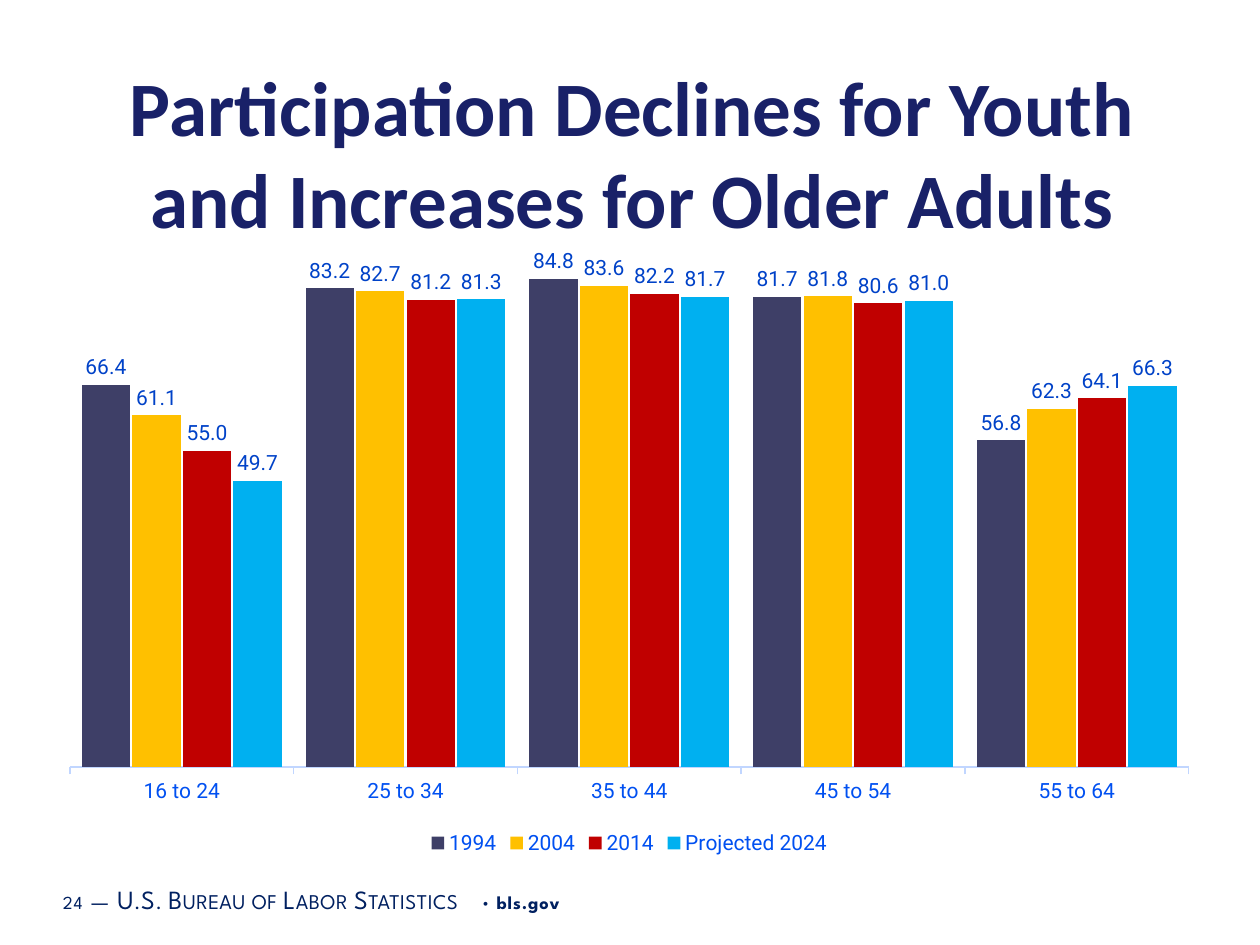
from lxml import etree
from pptx import Presentation
from pptx.chart.data import CategoryChartData
from pptx.dml.color import RGBColor
from pptx.enum.chart import XL_CHART_TYPE as ChartType
from pptx.enum.chart import XL_LABEL_POSITION as LabelPosition
from pptx.enum.chart import XL_LEGEND_POSITION as LegendPosition
from pptx.enum.chart import XL_TICK_LABEL_POSITION as TickLabels
from pptx.enum.chart import XL_TICK_MARK as TickMark
from pptx.enum.text import MSO_ANCHOR, PP_ALIGN
from pptx.oxml import parse_xml
from pptx.util import Inches, Pt

COLORS = {
    "title": "192168", "footer": "002060", "axis text": "0050F1",
    "axis line": "C1D6FF", "label": "0042C8",
}
CHART_NS = "http://schemas.openxmlformats.org/drawingml/2006/chart"


def format_font(font, name, size, color, bold=False):
    for attribute, value in {"name": name, "size": Pt(size), "bold": bold}.items():
        setattr(font, attribute, value)
    font.color.rgb = RGBColor.from_string(COLORS[color])


presentation = Presentation()
presentation.slide_width, presentation.slide_height = Inches(10), Inches(7.5)
slide = presentation.slides.add_slide(presentation.slide_layouts[5])

# Title
title = slide.shapes.title
title.left, title.top = Inches(0.52), Inches(0.3)
title.width, title.height = Inches(9), Inches(1.81)
title.text_frame.text = "Participation Declines for Youth and Increases for Older Adults"
title.text_frame.vertical_anchor = MSO_ANCHOR.MIDDLE
paragraph = title.text_frame.paragraphs[0]
paragraph.alignment = PP_ALIGN.CENTER
format_font(paragraph.runs[0].font, "Calibri", 44, "title", True)

# Participation rates by age group
rates = {
    "1994": ("3E3F67", (66.4, 83.2, 84.8, 81.7, 56.8)),
    "2004": ("FFC000", (61.1, 82.7, 83.6, 81.8, 62.3)),
    "2014": ("C00000", (55.0, 81.2, 82.2, 80.6, 64.1)),
    "Projected 2024": ("00B0F0", (49.7, 81.3, 81.7, 81.0, 66.3)),
}
chart_data = CategoryChartData(number_format="0.0")
chart_data.categories = ["16 to 24", "25 to 34", "35 to 44", "45 to 54", "55 to 64"]
for year, (_, values) in rates.items():
    chart_data.add_series(year, values)
chart = slide.shapes.add_chart(
    ChartType.COLUMN_CLUSTERED,
    Inches(0.37), Inches(1.88), Inches(9.25), Inches(4.95), chart_data,
).chart
chart.has_title = False
format_font(chart.font, "Roboto", 10, "footer")

chart.has_legend = True
chart.legend.position = LegendPosition.BOTTOM
chart.legend.include_in_layout = False
format_font(chart.legend.font, "Roboto", 12, "axis text")

value_axis = chart.value_axis
for attribute, value in {
    "minimum_scale": 0, "maximum_scale": 90,
    "has_major_gridlines": False, "visible": False,
}.items():
    setattr(value_axis, attribute, value)

category_axis = chart.category_axis
category_axis.major_tick_mark = TickMark.OUTSIDE
category_axis.tick_label_position = TickLabels.LOW
category_axis.format.line.color.rgb = RGBColor.from_string(COLORS["axis line"])
category_axis.format.line.width = Pt(0.75)
format_font(category_axis.tick_labels.font, "Roboto", 12, "axis text")

plot = chart.plots[0]
plot.gap_width, plot.overlap, plot.vary_by_categories = 50, -5, False
for series, (color, _) in zip(plot.series, rates.values()):
    series.format.fill.solid()
    series.format.fill.fore_color.rgb = RGBColor.from_string(color)
    series.invert_if_negative = False
    labels = series.data_labels
    for attribute, value in {
        "show_value": True, "number_format": "0.0",
        "number_format_is_linked": False, "position": LabelPosition.OUTSIDE_END,
    }.items():
        setattr(labels, attribute, value)
    format_font(labels.font, "Roboto", 12, "label")

# Fixed plot area, as fractions of the chart
plot_area = chart._chartSpace.find(f".//{{{CHART_NS}}}plotArea")
for old_layout in plot_area.findall(f"{{{CHART_NS}}}layout"):
    plot_area.remove(old_layout)
layout = parse_xml(f'<c:layout xmlns:c="{CHART_NS}"><c:manualLayout/></c:layout>')
for tag, value in {
    "layoutTarget": "inner", "xMode": "edge", "yMode": "edge",
    "x": 0.02, "y": 0.02, "w": 0.96, "h": 0.83,
}.items():
    etree.SubElement(layout[0], f"{{{CHART_NS}}}{tag}").set("val", str(value))
plot_area.insert(0, layout)

# Footer
footer = slide.shapes.add_textbox(Inches(0.43), Inches(6.93), Inches(6.33), Inches(0.4))
frame = footer.text_frame
for attribute, value in {
    "word_wrap": True, "vertical_anchor": MSO_ANCHOR.MIDDLE,
    "margin_left": Inches(0.07), "margin_right": Inches(0.07),
    "margin_top": Inches(0.04), "margin_bottom": Inches(0.04),
}.items():
    setattr(frame, attribute, value)
for text, size, spacing, small_caps, bold in [
    ("24", 10.5, 50, False, False),
    (" ", 16, 50, False, False),
    ("—", 15, 30, True, False),
    (" ", 16, 50, False, False),
    ("U.S. Bureau of Labor Statistics", 15, 30, True, False),
    (" • ", 10.5, 50, False, False),
    ("bls.gov", 10.5, 50, False, True),
]:
    run = frame.paragraphs[0].add_run()
    run.text = text
    format_font(run.font, "League Spartan", size, "footer", bold)
    properties = run._r.get_or_add_rPr()
    properties.set("spc", str(spacing))
    if small_caps:
        properties.set("cap", "small")

presentation.save("out.pptx")
